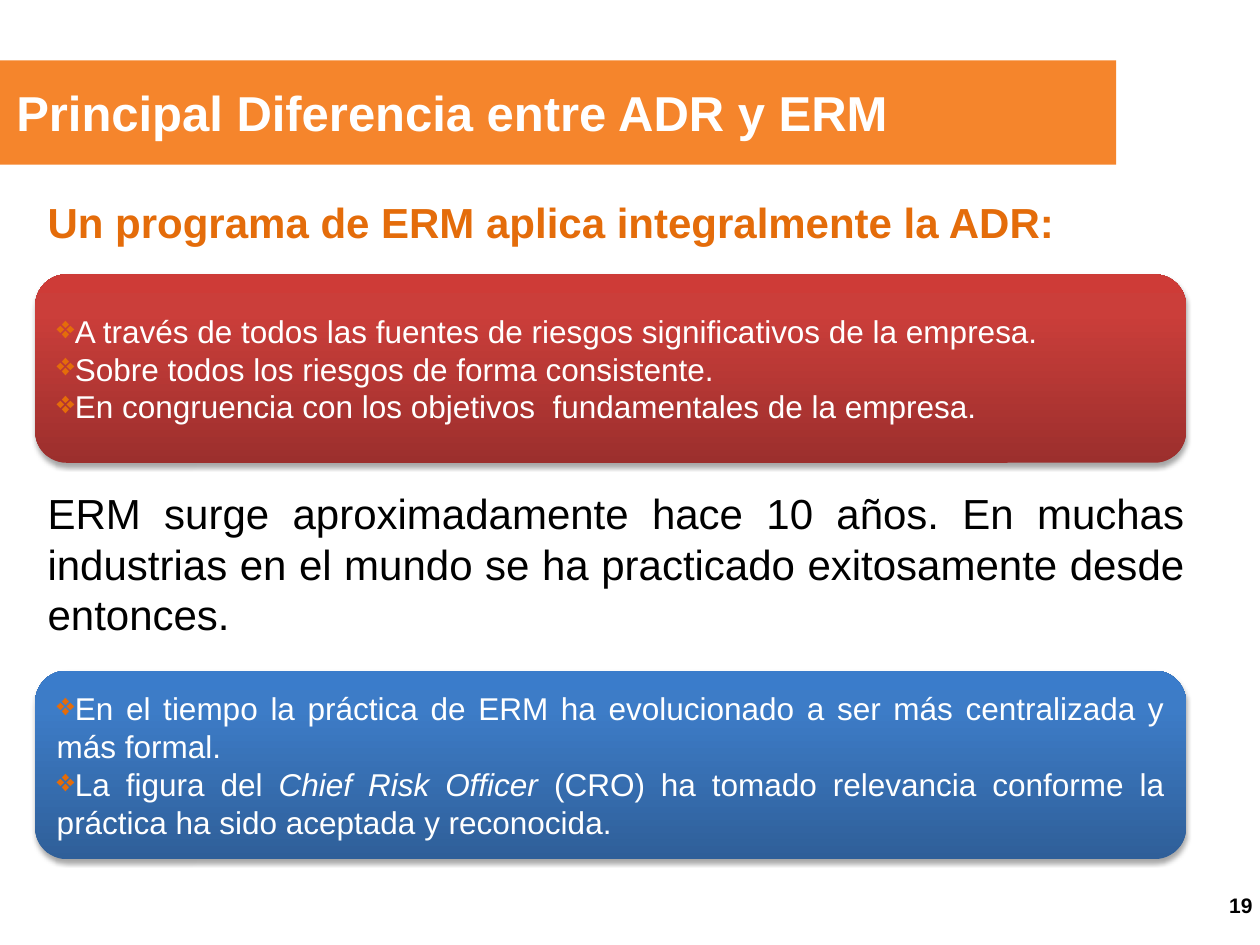
from lxml import etree
from pptx import Presentation
from pptx import util as u
from pptx.dml.color import RGBColor
from pptx.enum import shapes, text
from pptx.oxml import parse_xml
from pptx.oxml.ns import nsdecls, qn

FONT = "Arial"
ORANGE = RGBColor(0xF5, 0x85, 0x2C)
DARK_ORANGE = RGBColor(0xE4, 0x6C, 0x0A)
WHITE = RGBColor(0xFF, 0xFF, 0xFF)
BLACK = RGBColor(0, 0, 0)
# Gradient colours from bottom to top, at 0, 80 and 100 percent
REDS = (RGBColor(0x9C, 0x2F, 0x2D), RGBColor(0xCB, 0x3E, 0x3A), RGBColor(0xCE, 0x3B, 0x37))
BLUES = (RGBColor(0x2F, 0x5F, 0x99), RGBColor(0x3D, 0x7C, 0xC7), RGBColor(0x3A, 0x7C, 0xCB))

RISK_SCOPE = [
    ["A través de todos las fuentes de riesgos significativos de la empresa."],
    ["Sobre todos los riesgos de forma consistente."],
    ["En congruencia con los objetivos  fundamentales de la empresa."],
]
# The second run of a paragraph is in italics
ERM_EVOLUTION = [
    ["En el tiempo la práctica de ERM ha evolucionado a ser más centralizada y más formal."],
    ["La figura del ", "Chief Risk Officer",
     " (CRO) ha tomado relevancia conforme la práctica ha sido aceptada y reconocida."],
]


def style(font, size, color, bold=False):
    font.name, font.size, font.bold = FONT, u.Pt(size), bold
    font.color.rgb = color


def add_text_box(page, left, top, width, height, lines, anchor=text.MSO_ANCHOR.MIDDLE):
    box = page.shapes.add_textbox(u.Cm(left), u.Cm(top), u.Cm(width), u.Cm(height))
    frame = box.text_frame
    frame.word_wrap = True
    frame.vertical_anchor = anchor
    frame.text = "\n".join(lines)
    return frame.paragraphs


def add_title(page, left, top, width, height):
    band = page.shapes.add_shape(shapes.MSO_SHAPE.RECTANGLE, u.Cm(left), u.Cm(top),
                                 u.Cm(width), u.Cm(height))
    band.shadow.inherit = False
    band.fill.solid()
    band.fill.fore_color.rgb = ORANGE
    band.line.fill.background()
    para, = add_text_box(page, left + 0.08, top + 0.13, width - 2.28, height - 0.28,
                         ["Principal Diferencia entre ADR y ERM"])
    style(para.font, 28, WHITE, bold=True)


def add_body(page, left, top, width, height):
    heading, history = add_text_box(
        page, left, top, width, height,
        ["Un programa de ERM aplica integralmente la ADR:",
         "ERM surge aproximadamente hace 10 años. En muchas industrias en el mundo "
         "se ha practicado exitosamente desde entonces."],
        text.MSO_ANCHOR.TOP)
    style(heading.font, 24, DARK_ORANGE, bold=True)
    style(history.font, 24, BLACK)
    history.space_before = u.Pt(137.5)
    history.alignment = heading.alignment = text.PP_ALIGN.JUSTIFY


def add_gradient_and_shadow(panel, colors):
    stops = "".join(f'<a:gs pos="{place * 1000}"><a:srgbClr val="{color}"/></a:gs>'
                    for place, color in zip((0, 80, 100), colors))
    gradient = parse_xml(f'<a:gradFill {nsdecls("a")} rotWithShape="1"><a:gsLst>{stops}</a:gsLst>'
                         '<a:lin ang="16200000" scaled="0"/></a:gradFill>')
    shadow = parse_xml(
        f'<a:effectLst {nsdecls("a")}><a:outerShdw blurRad="{u.Pt(3.1)}" dist="{u.Pt(1.8)}" '
        'dir="5400000" rotWithShape="0"><a:srgbClr val="000000"><a:alpha val="35000"/>'
        '</a:srgbClr></a:outerShdw></a:effectLst>')
    properties = panel.element.spPr
    properties.find(qn("a:prstGeom")).addnext(gradient)
    properties.append(shadow)


def add_bullet(para):
    properties = para._p.get_or_add_pPr()
    color = etree.SubElement(properties, qn("a:buClr"))
    etree.SubElement(color, qn("a:srgbClr"), val=str(DARK_ORANGE))
    etree.SubElement(properties, qn("a:buChar"), char="❖")


def add_panel(page, left, top, width, height, colors, items):
    panel = page.shapes.add_shape(shapes.MSO_SHAPE.ROUNDED_RECTANGLE, u.Cm(left), u.Cm(top),
                                  u.Cm(width), u.Cm(height))
    panel.line.fill.background()
    add_gradient_and_shadow(panel, colors)
    frame = panel.text_frame
    frame.word_wrap = True
    frame.vertical_anchor = text.MSO_ANCHOR.MIDDLE
    frame.text = "\n".join("" for _ in items)
    for para, parts in zip(frame.paragraphs, items):
        para.alignment = text.PP_ALIGN.JUSTIFY
        add_bullet(para)
        for index, part in enumerate(parts):
            span = para.add_run()
            span.text = part
            style(span.font, 18, WHITE)
            span.font.italic = index == 1


def add_page_number(page, left, top, width, height):
    para, = add_text_box(page, left, top, width, height, ["19"])
    para.alignment = text.PP_ALIGN.RIGHT
    style(para.font, 12, BLACK, bold=True)


def main():
    deck = Presentation()
    deck.slide_width, deck.slide_height = u.Cm(25.4), u.Cm(19.05)
    page = deck.slides.add_slide(deck.slide_layouts[6])
    add_body(page, 0.71, 3.84, 23.42, 14.7)
    add_page_number(page, 19.58, 17.73, 5.92, 1.02)
    add_title(page, 0, 1.22, 22.5, 2.1)
    add_panel(page, 0.71, 5.53, 23.2, 3.8, REDS, RISK_SCOPE)
    add_panel(page, 0.71, 13.52, 23.2, 3.8, BLUES, ERM_EVOLUTION)
    deck.save("out.pptx")


if __name__ == "__main__":
    main()
